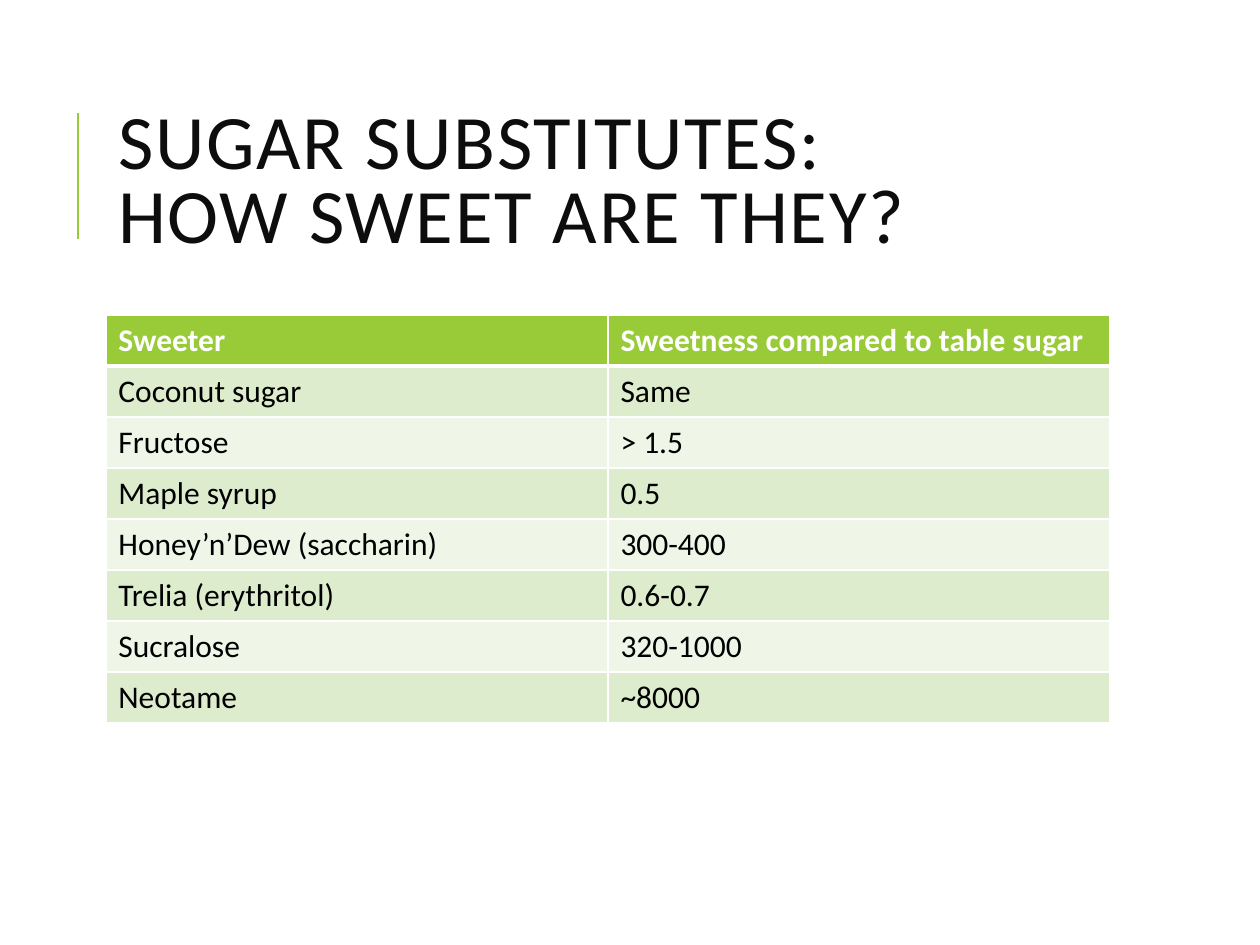
from lxml import etree
from pptx import Presentation
from pptx.dml.color import RGBColor
from pptx.enum.shapes import MSO_CONNECTOR
from pptx.enum.text import MSO_ANCHOR
from pptx.oxml.ns import qn
from pptx.util import Inches, Pt

STRAIGHT = MSO_CONNECTOR.STRAIGHT
MIDDLE = MSO_ANCHOR.MIDDLE
GREEN, WHITE, BLACK = "99CB38", "FFFFFF", "000000"
BANDS = ["EFF6E8", "DEECCE"]


def style_spans(para, size, color, bold=False):
    for span in para.runs:
        span.font.name = "Calibri"
        span.font.size = Pt(size)
        span.font.bold = bold
        span.font.color.rgb = RGBColor.from_string(color)


def add_border(cell, side, width):
    line = etree.SubElement(cell._tc.get_or_add_tcPr(), qn("a:" + side), w=str(Pt(width)))
    fill = etree.SubElement(line, qn("a:solidFill"))
    etree.SubElement(fill, qn("a:srgbClr"), val=WHITE)


deck = Presentation()
deck.slide_width, deck.slide_height = Inches(10), Inches(7.5)
page = deck.slides.add_slide(deck.slide_layouts[6])
left, width = Inches(0.84), Inches(7.97)

accent = page.shapes.add_connector(STRAIGHT, Inches(0.62), Inches(1.9), Inches(0.62), Inches(0.9))
accent.line.color.rgb = RGBColor.from_string(GREEN)
accent.line.width = Pt(1.5)
etree.SubElement(accent._element.spPr, qn("a:effectLst"))

title = page.shapes.add_textbox(left, Inches(0.64), width, Inches(1.64))
title.text_frame.word_wrap = True
title.text_frame.vertical_anchor = MIDDLE
para = title.text_frame.paragraphs[0]
para.text = "SUGAR SUBSTITUTES: \vHOW SWEET ARE THEY?"
para.line_spacing = 0.8
style_spans(para, 44, "0D0D0D")
for span in para.runs:
    span.font._element.set("spc", "100")

rows = [
    ("Sweeter", "Sweetness compared to table sugar"),
    ("Coconut sugar", "Same"),
    ("Fructose", "> 1.5"),
    ("Maple syrup", "0.5"),
    ("Honey’n’Dew (saccharin)", "300-400"),
    ("Trelia (erythritol)", "0.6-0.7"),
    ("Sucralose", "320-1000"),
    ("Neotame", "~8000"),
]
table = page.shapes.add_table(len(rows), 2, left, Inches(2.5), width, Inches(3.24)).table
for row_index, texts in enumerate(rows):
    header = row_index == 0
    for column_index, text in enumerate(texts):
        cell = table.cell(row_index, column_index)
        cell.text_frame.text = text
        style_spans(cell.text_frame.paragraphs[0], 18, WHITE if header else BLACK, header)
        for side in ("lnL", "lnR", "lnT", "lnB"):
            thick = (side == "lnB" and header) or (side == "lnT" and row_index == 1)
            add_border(cell, side, 3 if thick else 1)
        cell.fill.solid()
        cell.fill.fore_color.rgb = RGBColor.from_string(GREEN if header else BANDS[row_index % 2])

deck.save("out.pptx")
